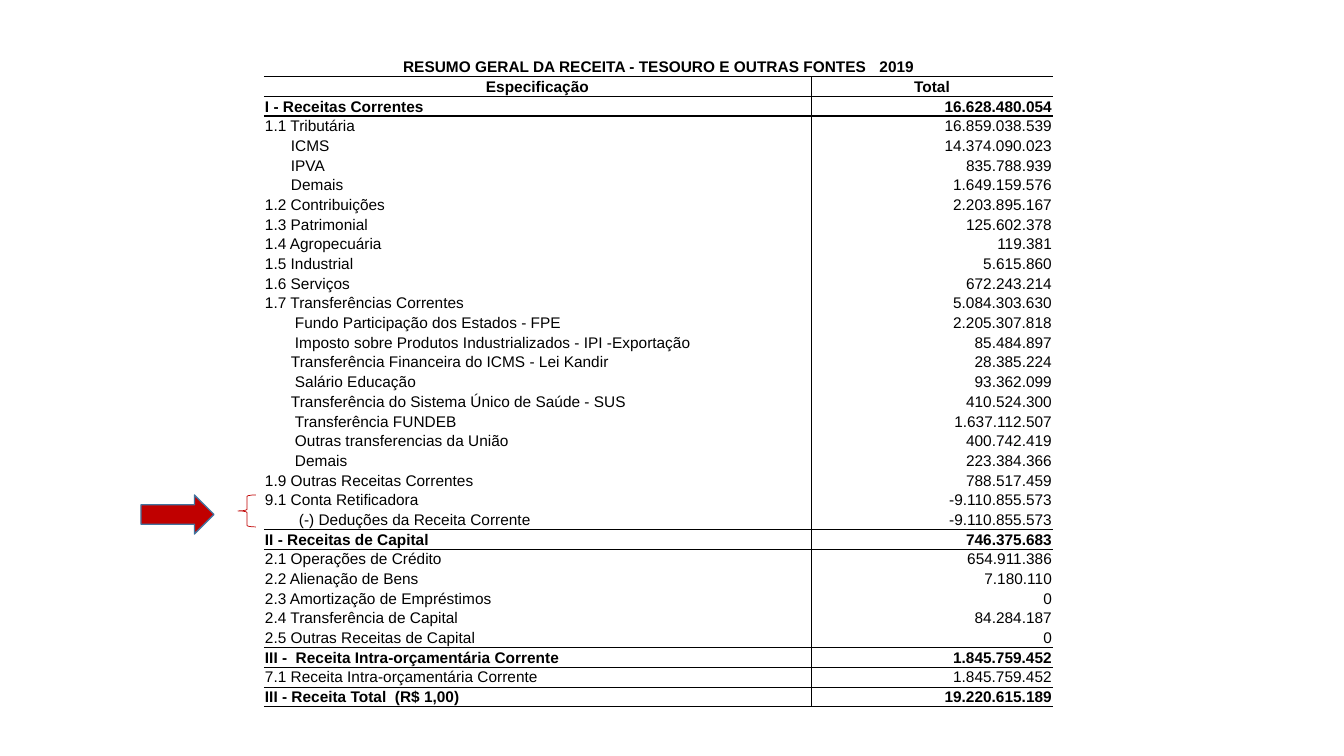
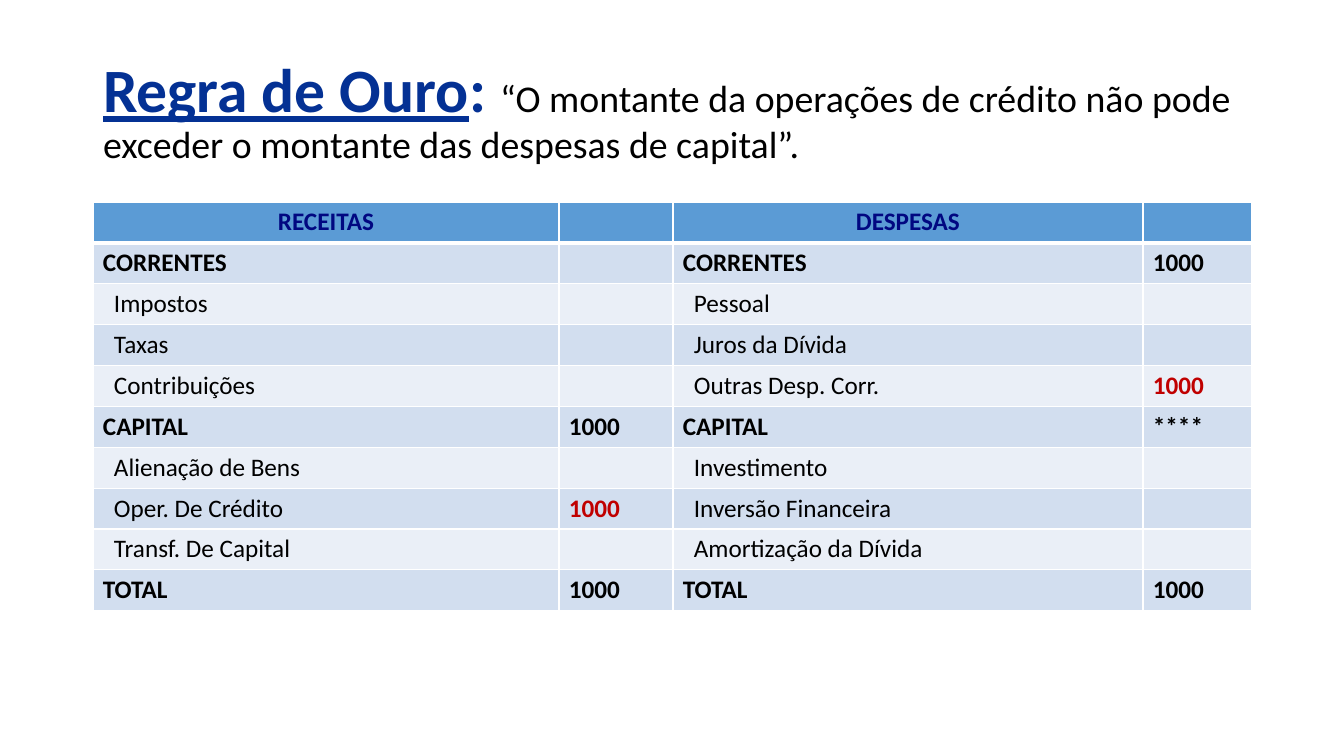
from dataclasses import dataclass

from lxml import etree
from pptx import Presentation
from pptx.dml.color import RGBColor
from pptx.enum.shapes import MSO_SHAPE
from pptx.enum.text import MSO_ANCHOR, MSO_AUTO_SIZE, PP_ALIGN
from pptx.oxml.ns import qn
from pptx.util import Pt

LEFT, CENTER, RIGHT = PP_ALIGN.LEFT, PP_ALIGN.CENTER, PP_ALIGN.RIGHT
TOP, MIDDLE = MSO_ANCHOR.TOP, MSO_ANCHOR.MIDDLE
BRACE, ARROW = MSO_SHAPE.LEFT_BRACE, MSO_SHAPE.RIGHT_ARROW
FIXED = MSO_AUTO_SIZE.NONE
PLAIN = "{2D5ABB26-0587-4C30-8999-92F81FD0307C}"
SCALE = 12192000 / 1344


@dataclass(frozen=True)
class Theme:
    """Colours, fonts and type sizes of the deck."""
    ink: str = "000000"
    white: str = "FFFFFF"
    red: str = "C00000"
    edge: str = "43739E"
    title: str = "043194"
    navy: str = "010781"
    head: str = "5B9BD5"
    bands: tuple = ("D2DEEF", "EAEFF7")
    sans: str = "Arial"
    body: str = "Calibri"
    small: int = 11
    cell: int = 18
    quote: int = 27
    big: int = 44


THEME = Theme()

INCOME = [
    ("I - Receitas Correntes", "16.628.480.054", 0),
    ("1.1 Tributária", "16.859.038.539", 0),
    ("ICMS", "14.374.090.023", 26),
    ("IPVA", "835.788.939", 26),
    ("Demais", "1.649.159.576", 26),
    ("1.2 Contribuições", "2.203.895.167", 0),
    ("1.3 Patrimonial", "125.602.378", 0),
    ("1.4 Agropecuária", "119.381", 0),
    ("1.5 Industrial", "5.615.860", 0),
    ("1.6 Serviços", "672.243.214", 0),
    ("1.7 Transferências Correntes", "5.084.303.630", 0),
    ("Fundo Participação dos Estados - FPE", "2.205.307.818", 30),
    ("Imposto sobre Produtos Industrializados - IPI -Exportação", "85.484.897", 30),
    ("Transferência Financeira do ICMS - Lei Kandir", "28.385.224", 26),
    ("Salário Educação", "93.362.099", 30),
    ("Transferência do Sistema Único de Saúde - SUS", "410.524.300", 26),
    ("Transferência FUNDEB", "1.637.112.507", 30),
    ("Outras transferencias da União", "400.742.419", 30),
    ("Demais", "223.384.366", 30),
    ("1.9 Outras Receitas Correntes", "788.517.459", 0),
    ("9.1 Conta Retificadora", "-9.110.855.573", 0),
    ("(-) Deduções da Receita Corrente", "-9.110.855.573", 34),
    ("II - Receitas de Capital", "746.375.683", 0),
    ("2.1 Operações de Crédito", "654.911.386", 0),
    ("2.2 Alienação de Bens", "7.180.110", 0),
    ("2.3 Amortização de Empréstimos", "0", 0),
    ("2.4 Transferência de Capital", "84.284.187", 0),
    ("2.5 Outras Receitas de Capital", "0", 0),
    ("III -  Receita Intra-orçamentária Corrente", "1.845.759.452", 0),
    ("7.1 Receita Intra-orçamentária Corrente", "1.845.759.452", 0),
    ("III - Receita Total  (R$ 1,00)", "19.220.615.189", 0),
]

BUDGET = [
    ("CORRENTES", "", "CORRENTES", "1000"),
    ("Impostos", "", "Pessoal", ""),
    ("Taxas", "", "Juros da Dívida", ""),
    ("Contribuições", "", "Outras Desp. Corr.", "1000"),
    ("CAPITAL", "1000", "CAPITAL", "****"),
    ("Alienação de Bens", "", "Investimento", ""),
    ("Oper. De Crédito", "1000", "Inversão Financeira", ""),
    ("Transf. De Capital", "", "Amortização da Dívida", ""),
    ("TOTAL", "1000", "TOTAL", "1000"),
]


def px(*vals):
    """Turn pixel lengths into a list of EMU."""
    return [round(val * SCALE) for val in vals]


def rgb(code):
    """Make a colour from its hex code."""
    return RGBColor.from_string(code)


def put(para, text, font=THEME.body, size=THEME.cell, color=THEME.ink,
        bold=False, under=False, align=LEFT, gap=0):
    """Add one run of formatted text to a paragraph."""
    para.alignment = align
    run = para.add_run()
    run.text = text
    run.font.name, run.font.size = font, Pt(size)
    run.font.bold, run.font.underline = bold, under
    run.font.color.rgb = rgb(color)
    if gap:
        run.font._element.set("spc", str(gap * 100))


def grid(slide, box, cols, count):
    """Add a plain table with equal rows and return it."""
    table = slide.shapes.add_table(count, len(cols), *px(*box)).table
    table.first_row = table.horz_banding = False
    table._tbl.tblPr.find(qn("a:tableStyleId")).text = PLAIN
    for col, wide in zip(table.columns, px(*cols)):
        col.width = wide
    for row in table.rows:
        row.height = px(box[3] / count)[0]
    return table


def frame(cell, color, **sides):
    """Draw the cell borders whose widths in points are given."""
    props = cell._tc.get_or_add_tcPr()
    for side in "LRTB":
        wide = sides.get(side, 0)
        line = etree.SubElement(props, qn("a:ln" + side), w=str(int(wide * 12700)))
        if wide:
            fill = etree.SubElement(line, qn("a:solidFill"))
            etree.SubElement(fill, qn("a:srgbClr"), val=color)
        else:
            etree.SubElement(line, qn("a:noFill"))


def inset(cell, pads, anchor):
    """Set the cell margins (left, top, right, bottom) and anchor."""
    (cell.margin_left, cell.margin_top,
     cell.margin_right, cell.margin_bottom) = px(*pads)
    cell.vertical_anchor = anchor


def mark(slide, kind, box, line, wide, fill=None):
    """Add a preset shape that points at table rows."""
    shape = slide.shapes.add_shape(kind, *px(*box))
    shape.shadow.inherit = False
    shape.line.color.rgb, shape.line.width = rgb(line), Pt(wide)
    if fill:
        shape.fill.solid()
        shape.fill.fore_color.rgb = rgb(fill)
    else:
        shape.fill.background()


def ledger(slide, box):
    """Fill the box with the ruled income table."""
    rows = [("", "", 0), ("Especificação", "Total", 0)] + INCOME
    count = len(rows)
    table = grid(slide, box, (547, box[2] - 547), count)
    strong = [i < 2 or row[0].split()[0] in ("I", "II", "III")
              for i, row in enumerate(rows)]
    rules = [1 if i == 2 else 0.5 if strong[i] or strong[i + 1] else 0
             for i in range(count - 1)] + [0.5]
    for i, (label, value, dent) in enumerate(rows):
        split = 0.5 if i else 0
        for j, text in enumerate((label, value)):
            cell = table.cell(i, j)
            frame(cell, THEME.ink, L=split * j, R=split * (1 - j),
                  T=rules[i - 1] if i else 0, B=rules[i])
            inset(cell, (1 + dent * (1 - j), 1, 1, 0), MIDDLE)
            if text:
                align = CENTER if i == 1 else RIGHT if j else LEFT
                put(cell.text_frame.paragraphs[0], text, font=THEME.sans,
                    size=THEME.small, bold=strong[i], align=align)
    table.cell(0, 0).merge(table.cell(0, 1))
    para = table.cell(0, 0).text_frame.paragraphs[0]
    for text, gap in (("RESUMO GERAL DA RECEITA - TESOURO E OUTRAS FONTES", 0),
                      (" ", 6), ("2019", 0)):
        put(para, text, font=THEME.sans, size=THEME.small, bold=True,
            align=CENTER, gap=gap)


def pointer(slide, box):
    """Place the arrow and the brace at the two ends of the box."""
    left, top, wide, high = box
    mark(slide, BRACE, (left + wide - 18, top, 18, high - 7), THEME.red, 0.5)
    mark(slide, ARROW, (left, top, 73, high), THEME.edge, 1, THEME.red)


def heading(slide, box):
    """Write the rule and its quote in the title placeholder."""
    title = slide.shapes.title
    title.left, title.top, title.width, title.height = px(*box)
    body = title.text_frame
    body.word_wrap, body.auto_size = True, FIXED
    body.vertical_anchor = MIDDLE
    para = body.paragraphs[0]
    para.line_spacing = 0.9
    look = {"size": THEME.big, "color": THEME.title, "bold": True}
    put(para, "Regra de Ouro", under=True, **look)
    put(para, ": ", **look)
    put(para, "“O montante da operações de crédito não pode exceder "
        "o montante das despesas de capital”.", size=THEME.quote)


def budget(slide, box):
    """Fill the box with the banded budget table."""
    rows = [("RECEITAS", "", "DESPESAS", "")] + BUDGET
    table = grid(slide, box, (466, 114, 470, box[2] - 1050), len(rows))
    for i, row in enumerate(rows):
        head, group = i == 0, row[0].isupper()
        for j, text in enumerate(row):
            cell, value = table.cell(i, j), j % 2 == 1
            frame(cell, THEME.white, L=1, R=1, T=3 if i == 1 else 1,
                  B=3 if head else 1)
            cell.fill.solid()
            cell.fill.fore_color.rgb = rgb(
                THEME.head if head else THEME.bands[(i - 1) % 2])
            inset(cell, (10 if group or value else 21, 5, 10, 5), TOP)
            color = (THEME.navy if head else
                     THEME.red if value and not group else THEME.ink)
            if text:
                put(cell.text_frame.paragraphs[0], text, color=color,
                    bold=group or value, align=CENTER if head else LEFT)


def main():
    """Build and save the two slides."""
    deck = Presentation()
    deck.slide_width, deck.slide_height = px(1344, 756)
    first = deck.slides.add_slide(deck.slide_layouts[6])
    ledger(first, (264, 57, 789, 650))
    pointer(first, (141, 495, 115, 39))
    second = deck.slides.add_slide(deck.slide_layouts[5])
    heading(second, (93, 40, 1159, 146))
    budget(second, (93, 202, 1159, 409))
    deck.save("out.pptx")


if __name__ == "__main__":
    main()
